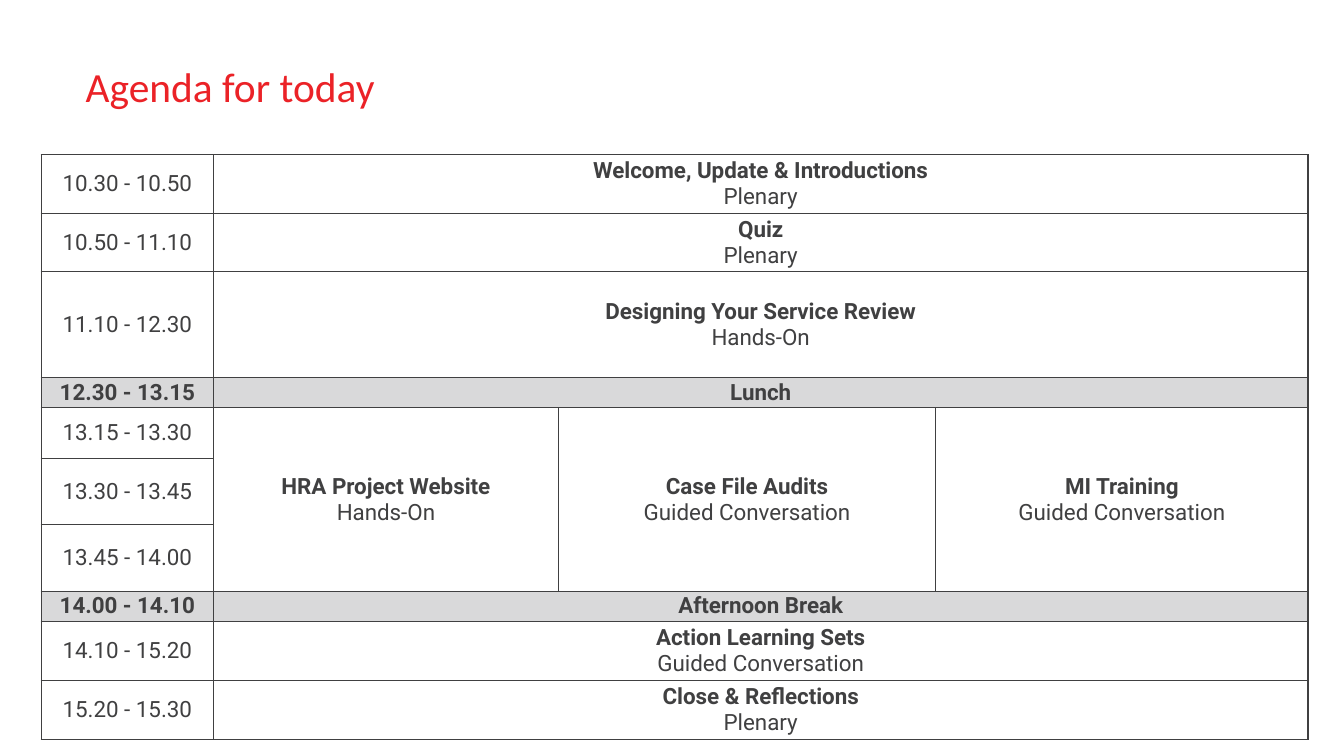
from lxml.etree import SubElement
from pptx import Presentation
from pptx.dml.color import RGBColor
from pptx.enum.text import MSO_ANCHOR as Anchor, PP_ALIGN as Align
from pptx.oxml.ns import qn
from pptx.util import Pt

RED = RGBColor(0xEB, 0x22, 0x27)
DARK = RGBColor(0x40, 0x40, 0x41)
GREY = RGBColor(0xD9, 0xD9, 0xDA)

# Content: time, row height, sessions (name, format); no sessions = previous ones go on
TITLE = "Agenda for today"
AGENDA = [
    ("10.30 - 10.50", 42.3, [("Welcome, Update & Introductions", "Plenary")]),
    ("10.50 - 11.10", 41.4, [("Quiz", "Plenary")]),
    ("11.10 - 12.30", 75.5, [("Designing Your Service Review", "Hands-On")]),
    ("12.30 - 13.15", 21.6, [("Lunch",)]),
    ("13.15 - 13.30", 36, [("HRA Project Website", "Hands-On"),
                           ("Case File Audits", "Guided Conversation"),
                           ("MI Training", "Guided Conversation")]),
    ("13.30 - 13.45", 47.5, []),
    ("13.45 - 14.00", 47.5, []),
    ("14.00 - 14.10", 21.6, [("Afternoon Break",)]),
    ("14.10 - 15.20", 42.3, [("Action Learning Sets", "Guided Conversation")]),
    ("15.20 - 15.30", 42.3, [("Close & Reflections", "Plenary")]),
]
COLUMN_WIDTHS = [123, 246.4, 269.5, 265.9]


def add_borders(cell):
    properties = cell._tc.get_or_add_tcPr()
    for side in ("lnL", "lnR", "lnT", "lnB"):
        line = SubElement(properties, qn("a:" + side), w=str(Pt(1)))
        fill = SubElement(line, qn("a:solidFill"))
        SubElement(fill, qn("a:srgbClr"), val=str(DARK))


def write_cell(cell, lines, bold_first):
    cell.text_frame.text = "\n".join(lines)
    for index, para in enumerate(cell.text_frame.paragraphs):
        para.alignment = Align.CENTER
        font = para.runs[0].font
        font.name, font.size = "Roboto", Pt(16)
        font.bold = bold_first and index == 0
        font.color.rgb = DARK


deck = Presentation()
deck.slide_width, deck.slide_height = Pt(960), Pt(540)
page = deck.slides.add_slide(deck.slide_layouts[5])

# Title
title = page.shapes.title
title.left, title.top, title.width, title.height = Pt(36), Pt(47.5), Pt(809), Pt(44)
frame = title.text_frame
frame.text = TITLE
frame.word_wrap = True
frame.vertical_anchor = Anchor.TOP
frame.margin_left, frame.margin_top = Pt(25.2), Pt(6)
heading = frame.paragraphs[0]
heading.alignment = Align.LEFT
heading.line_spacing = 0.7
heading.font.name, heading.font.size = "Calibri", Pt(29.6)
heading.font.color.rgb = RED

# Empty agenda grid
total_width = sum(COLUMN_WIDTHS)
total_height = sum(height for _, height, _ in AGENDA)
table = page.shapes.add_table(len(AGENDA), len(COLUMN_WIDTHS), Pt(29.5), Pt(110.5),
                              Pt(total_width), Pt(total_height)).table
table.first_row = table.horz_banding = False
for column, width in zip(table.columns, COLUMN_WIDTHS):
    column.width = Pt(width)
for cell in table.iter_cells():
    cell.margin_left = cell.margin_right = Pt(2)
    cell.margin_top = cell.margin_bottom = Pt(1.4)
    cell.vertical_anchor = Anchor.MIDDLE
    add_borders(cell)

# Agenda rows
last_column = len(COLUMN_WIDTHS) - 1
for row, (time, height, sessions) in enumerate(AGENDA):
    table.rows[row].height = Pt(height)
    is_break = len(sessions) == 1 and len(sessions[0]) == 1
    for column in range(len(COLUMN_WIDTHS)):
        fill = table.cell(row, column).fill
        if is_break:
            fill.solid()
            fill.fore_color.rgb = GREY
        else:
            fill.background()
    write_cell(table.cell(row, 0), [time], is_break)

    end_row = row
    while end_row + 1 < len(AGENDA) and not AGENDA[end_row + 1][2]:
        end_row += 1
    for column, session in enumerate(sessions, start=1):
        end_column = last_column if len(sessions) == 1 else column
        cell = table.cell(row, column)
        if (end_row, end_column) != (row, column):
            cell.merge(table.cell(end_row, end_column))
        write_cell(cell, session, True)

deck.save("out.pptx")
